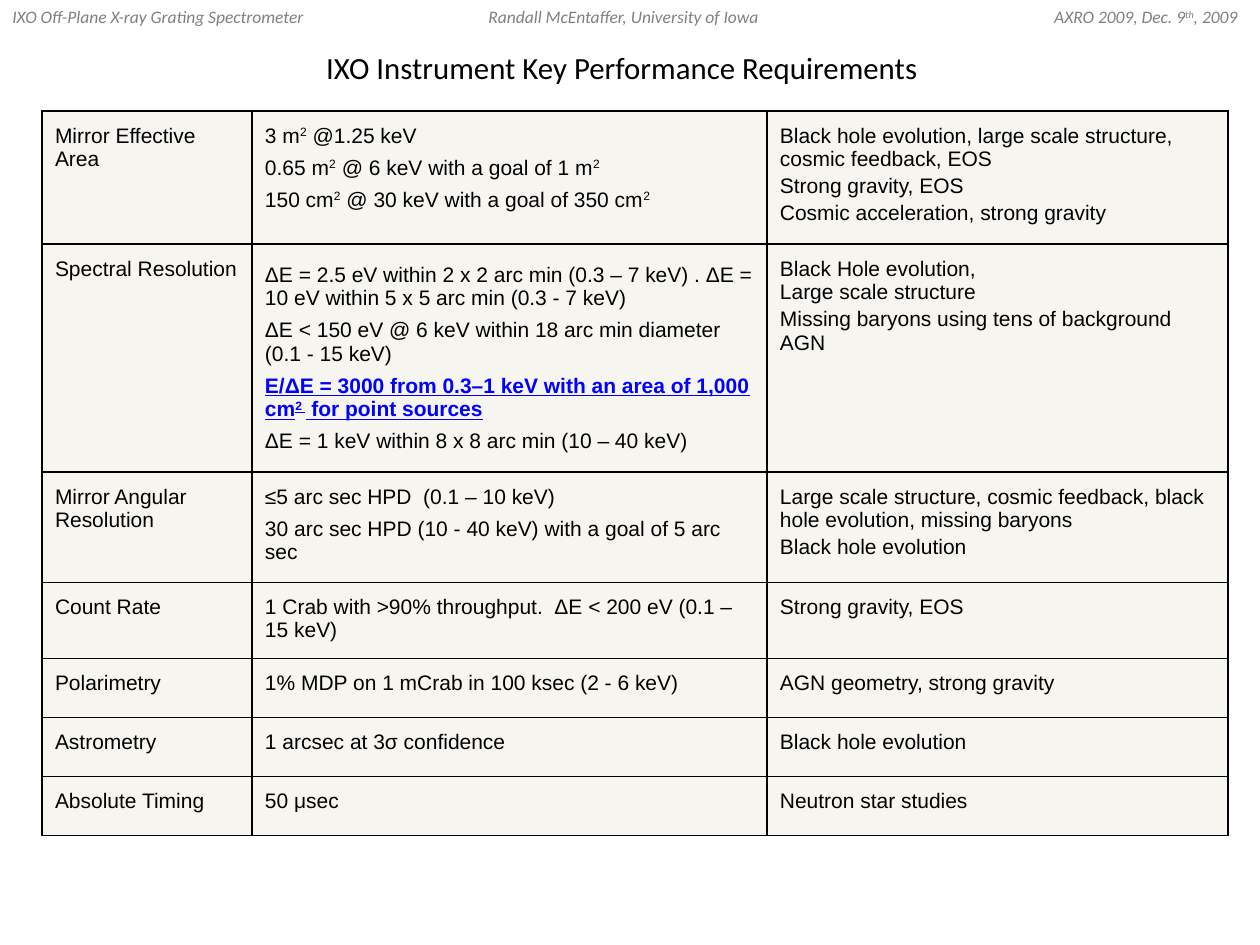
from lxml import etree
from pptx import Presentation
from pptx.dml.color import RGBColor
from pptx.enum.text import MSO_ANCHOR, MSO_AUTO_SIZE, PP_ALIGN
from pptx.oxml.ns import qn
from pptx.util import Emu, Pt

TOP, MIDDLE = MSO_ANCHOR.TOP, MSO_ANCHOR.MIDDLE
FIXED = MSO_AUTO_SIZE.NONE
LEFT, CENTER = PP_ALIGN.LEFT, PP_ALIGN.CENTER

HEAD = ("IXO Off-Plane X-ray Grating Spectrometer\t"
        "Randall McEntaffer, University of Iowa\t"
        "AXRO 2009, Dec. 9^th^, 2009")
TITLE = "IXO Instrument Key Performance Requirements"
COLS = [210, 515, 461]
GAPS = [(2.4, 3.6), (1.8, 3), (1.8, 0)]
ROWS = [
    (132, ["Mirror Effective Area"],
     ["3 m^2^ @1.25 keV",
      "0.65 m^2^ @ 6 keV with a goal of 1 m^2",
      "150 cm^2^ @ 30 keV with a goal of 350 cm^2"],
     ["Black hole evolution, large scale structure, cosmic feedback, EOS",
      "Strong gravity, EOS",
      "Cosmic acceleration, strong gravity"]),
    (228, ["Spectral Resolution"],
     ["ΔE = 2.5 eV within 2 x 2 arc min (0.3 – 7 keV) . "
      "ΔE = 10 eV within 5 x 5 arc min (0.3 - 7 keV)",
      "ΔE < 150 eV @ 6 keV within 18 arc min diameter (0.1 - 15 keV)",
      "*E/ΔE = 3000 from 0.3–1 keV with an area of 1,000 cm^2 ^ for point sources",
      "ΔE = 1 keV within 8 x 8 arc min (10 – 40 keV)"],
     ["Black Hole evolution, \nLarge scale structure",
      "Missing baryons using tens of background AGN"]),
    (109, ["Mirror Angular Resolution"],
     ["≤5 arc sec HPD  (0.1 – 10 keV)",
      "30 arc sec HPD (10 - 40 keV) with a goal of 5 arc sec"],
     ["Large scale structure, cosmic feedback, black hole evolution, missing baryons",
      "Black hole evolution"]),
    (76, ["Count Rate"],
     ["1 Crab with >90% throughput.  ΔE < 200 eV (0.1 – 15 keV)"],
     ["Strong gravity, EOS"]),
    (59, ["Polarimetry"],
     ["1% MDP on 1 mCrab in 100 ksec (2 - 6 keV)"],
     ["AGN geometry, strong gravity"]),
    (59, ["Astrometry"], ["1 arcsec at 3σ confidence"], ["Black hole evolution"]),
    (59, ["Absolute Timing"], ["50 μsec"], ["Neutron star studies"]),
]


def px(n):
    return Emu(round(n * 914400 / 126))


def rgb(code):
    return RGBColor.from_string(code)


def write(frame, lines, size=12, font="Arial", color="000000", italic=False,
          align=LEFT, before=0, after=0, space=1.0, tabs=()):
    for row, line in enumerate(lines):
        para = frame.add_paragraph() if row else frame.paragraphs[0]
        para.alignment = align
        para.line_spacing = space
        para.space_before = Pt(before if row else 0)
        para.space_after = Pt(after)
        if tabs:
            stops = etree.SubElement(para._p.get_or_add_pPr(), qn("a:tabLst"))
            for pos, kind in tabs:
                etree.SubElement(stops, qn("a:tab"), pos=str(px(pos)), algn=kind)
        strong = line.startswith("*")
        for part, chunk in enumerate(line.lstrip("*").split("^")):
            for step, words in enumerate(chunk.split("\n")):
                if step:
                    para.add_line_break()
                if not words:
                    continue
                run = para.add_run()
                run.text = words
                run.font.size = Pt(size)
                run.font.name = font
                run.font.italic = italic
                run.font.bold = strong
                run.font.underline = strong
                run.font.color.rgb = rgb("0000FF" if strong else color)
                if part % 2:
                    run._r.get_or_add_rPr().set("baseline", "30000")


class Deck:
    font = "Calibri"
    gray = "808080"
    fill = "EEECE1"
    edge = "000000"

    def __init__(self):
        self.file = Presentation()
        self.file.slide_width, self.file.slide_height = px(1260), px(945)
        self.slide = self.file.slides.add_slide(self.file.slide_layouts[5])

    def header(self, text, x, y, w, h):
        frame = self.slide.shapes.add_textbox(px(x), px(y), px(w), px(h)).text_frame
        frame.word_wrap = True
        write(frame, [text], size=10, font=self.font, color=self.gray,
              italic=True, tabs=[(611, "ctr"), (1225, "r")])

    def title(self, text, x, y, w, h):
        shape = self.slide.shapes.title
        shape.left, shape.top, shape.width, shape.height = map(px, (x, y, w, h))
        frame = shape.text_frame
        frame.auto_size = FIXED
        frame.vertical_anchor = MIDDLE
        write(frame, [text], size=17.6, font=self.font, align=CENTER, space=0.65)

    def paint(self, cell):
        props = cell._tc.get_or_add_tcPr()
        for side in "LRTB":
            line = etree.SubElement(props, qn("a:ln" + side), w=str(Pt(1)))
            solid = etree.SubElement(line, qn("a:solidFill"))
            etree.SubElement(solid, qn("a:srgbClr"), val=self.edge)
        cell.fill.solid()
        cell.fill.fore_color.rgb = rgb(self.fill)
        tint = props.find(qn("a:solidFill")).find(qn("a:srgbClr"))
        etree.SubElement(tint, qn("a:alpha"), val="50000")

    def table(self, rows, cols, x, y):
        high = sum(row[0] for row in rows)
        grid = self.slide.shapes.add_table(
            len(rows), len(cols), px(x), px(y), px(sum(cols)), px(high)).table
        grid.first_row = grid.horz_banding = False
        for col, wide in zip(grid.columns, cols):
            col.width = px(wide)
        for r, (tall, *cells) in enumerate(rows):
            grid.rows[r].height = px(tall)
            for c, lines in enumerate(cells):
                cell = grid.cell(r, c)
                cell.margin_left = cell.margin_right = px(13)
                cell.margin_top = cell.margin_bottom = px(13)
                cell.vertical_anchor = MIDDLE if len(lines) > 3 else TOP
                before, after = GAPS[c]
                write(cell.text_frame, lines, before=before, after=after)
                self.paint(cell)


def main():
    deck = Deck()
    deck.header(HEAD, 0, 0, 1260, 34)
    deck.title(TITLE, 126, 53, 992, 39)
    deck.table(ROWS, COLS, 42, 111)
    deck.file.save("out.pptx")


if __name__ == "__main__":
    main()
